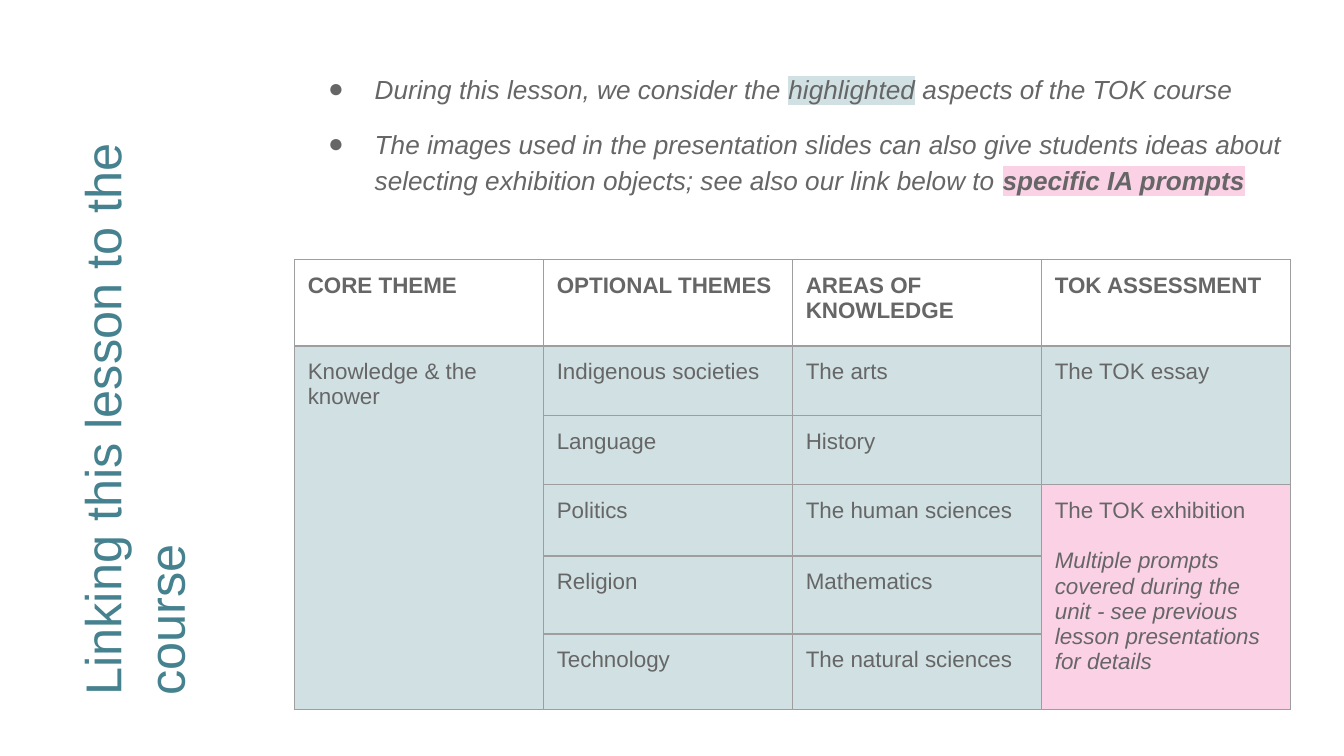
import pptx
import pptx.dml.color
import pptx.enum.text
import pptx.oxml
import pptx.oxml.ns
import pptx.util
from lxml import etree

Pt = pptx.util.Pt
NS = pptx.oxml.ns.nsdecls("a")
FONT = "Arial"
TEAL, GREY, WHITE = "45818E", "666666", "FFFFFF"
BLUE, PINK, BORDER = "D0E0E3", "FBD1E6", "9E9E9E"


def color(value):
    return pptx.dml.color.RGBColor.from_string(value)


class LessonSlide:
    """Holds the style and the current page."""

    def __init__(self, deck):
        self.page = deck.slides.add_slide(deck.slide_layouts[5])

    def set_font(self, font, size, shade=GREY, bold=False, italic=False):
        font.name, font.size = FONT, Pt(size)
        font.bold, font.italic = bold, italic
        font.color.rgb = color(shade)

    def set_frame(self, frame):
        frame.word_wrap = True
        frame.auto_size = pptx.enum.text.MSO_AUTO_SIZE.NONE
        frame.vertical_anchor = pptx.enum.text.MSO_ANCHOR.TOP
        frame.margin_left = frame.margin_right = Pt(7.2)
        frame.margin_top = frame.margin_bottom = Pt(7.2)

    def highlight(self, span, shade):
        # The highlight follows the fill in the run properties
        span.font.color.rgb = color(GREY)
        fill = span.font.fill._xPr.find(pptx.oxml.ns.qn("a:solidFill"))
        fill.addnext(pptx.oxml.parse_xml(
            f'<a:highlight {NS}><a:srgbClr val="{shade}"/></a:highlight>'))

    def add_title(self, text, left, top, width, height):
        title = self.page.shapes.title
        title.left, title.top = Pt(left), Pt(top)
        title.width, title.height = Pt(width), Pt(height)
        title.rotation = 270
        self.set_frame(title.text_frame)
        para = title.text_frame.paragraphs[0]
        para.text = text
        para.alignment = pptx.enum.text.PP_ALIGN.LEFT
        para.line_spacing = 1.05
        self.set_font(para.font, 27, TEAL)

    def add_bullets(self, items, left, top, width, height):
        box = self.page.shapes.add_textbox(Pt(left), Pt(top), Pt(width), Pt(height))
        frame = box.text_frame
        self.set_frame(frame)
        for index, spans in enumerate(items):
            para = frame.add_paragraph() if index else frame.paragraphs[0]
            properties = para._p.get_or_add_pPr()
            properties.set("marL", str(Pt(36)))
            properties.set("indent", str(-Pt(25)))
            for xml in (f'<a:buClr {NS}><a:srgbClr val="{GREY}"/></a:buClr>',
                        f'<a:buFont {NS} typeface="{FONT}"/>',
                        f'<a:buChar {NS} char="●"/>'):
                properties.append(pptx.oxml.parse_xml(xml))
            para.line_spacing = 1.15
            if index:
                para.space_before = para.space_after = Pt(10)
            self.set_font(para.font, 14, italic=True)
            for text, shade, bold in spans:
                span = para.add_run()
                span.text = text
                if bold:
                    span.font.bold = True
                if shade:
                    self.highlight(span, shade)

    def style_cell(self, cell, shade):
        properties = cell._tc.get_or_add_tcPr()
        for side in ("lnL", "lnR", "lnT", "lnB"):
            properties.append(pptx.oxml.parse_xml(
                f'<a:{side} {NS} w="{Pt(0.75)}"><a:solidFill>'
                f'<a:srgbClr val="{BORDER}"/></a:solidFill></a:{side}>'))
        cell.fill.solid()
        cell.fill.fore_color.rgb = color(shade)
        cell.margin_left = cell.margin_right = Pt(7.2)
        cell.margin_top = cell.margin_bottom = Pt(7.2)

    def write_cell(self, cell, text, bold=False, note=None):
        para = cell.text_frame.paragraphs[0]
        para.text = text
        self.set_font(para.font, 12, bold=bold)
        if note:
            para = cell.text_frame.add_paragraph()
            para.text = note
            para.space_before = Pt(13.5)
            self.set_font(para.font, 12, italic=True)

    def add_table(self, columns, row_heights, left, top, column_width):
        """Each column lists (text, rows spanned, fill, note) under its heading."""
        count = len(columns)
        table = self.page.shapes.add_table(
            len(row_heights), count, Pt(left), Pt(top),
            Pt(column_width * count), Pt(sum(row_heights))).table
        table.first_row = table.horz_banding = False
        for row, height in zip(table.rows, row_heights):
            row.height = Pt(height)
        for number, (heading, entries) in enumerate(columns):
            table.columns[number].width = Pt(column_width)
            self.style_cell(table.cell(0, number), WHITE)
            self.write_cell(table.cell(0, number), heading, bold=True)
            row = 1
            for text, rows, shade, note in entries:
                for offset in range(rows):
                    self.style_cell(table.cell(row + offset, number), shade)
                cell = table.cell(row, number)
                if rows > 1:
                    cell.merge(table.cell(row + rows - 1, number))
                self.write_cell(cell, text, note=note)
                row += rows


def single_rows(*texts):
    return [(text, 1, BLUE, None) for text in texts]


def main():
    deck = pptx.Presentation()
    deck.slide_width, deck.slide_height = Pt(720), Pt(405)
    slide = LessonSlide(deck)

    # Sideways title
    slide.add_title("Linking this lesson to the course", -95, 153.4, 350.6, 102.2)

    # Introduction
    slide.add_bullets([
        [("During this lesson, we consider the ", None, False),
         ("highlighted", BLUE, False),
         (" aspects of the TOK course", None, False)],
        [("The images used in the presentation slides can also give students ideas "
          "about selecting exhibition objects; see also our link below to ", None, False),
         ("specific IA prompts", PINK, True)],
    ], 157.7, 29.5, 537.8, 87.8)

    # Course overview
    slide.add_table([
        ("CORE THEME", [("Knowledge & the knower", 5, BLUE, None)]),
        ("OPTIONAL THEMES", single_rows(
            "Indigenous societies", "Language", "Politics", "Religion", "Technology")),
        ("AREAS OF KNOWLEDGE", single_rows(
            "The arts", "History", "The human sciences", "Mathematics",
            "The natural sciences")),
        ("TOK ASSESSMENT", [
            ("The TOK essay", 2, BLUE, None),
            ("The TOK exhibition", 3, PINK,
             "Multiple prompts covered during the unit - see previous lesson "
             "presentations for details")]),
    ], [46.2, 37.4, 37, 38.1, 41.8, 40.3], 157.7, 139.2, 133.4)

    deck.save("out.pptx")


if __name__ == "__main__":
    main()
